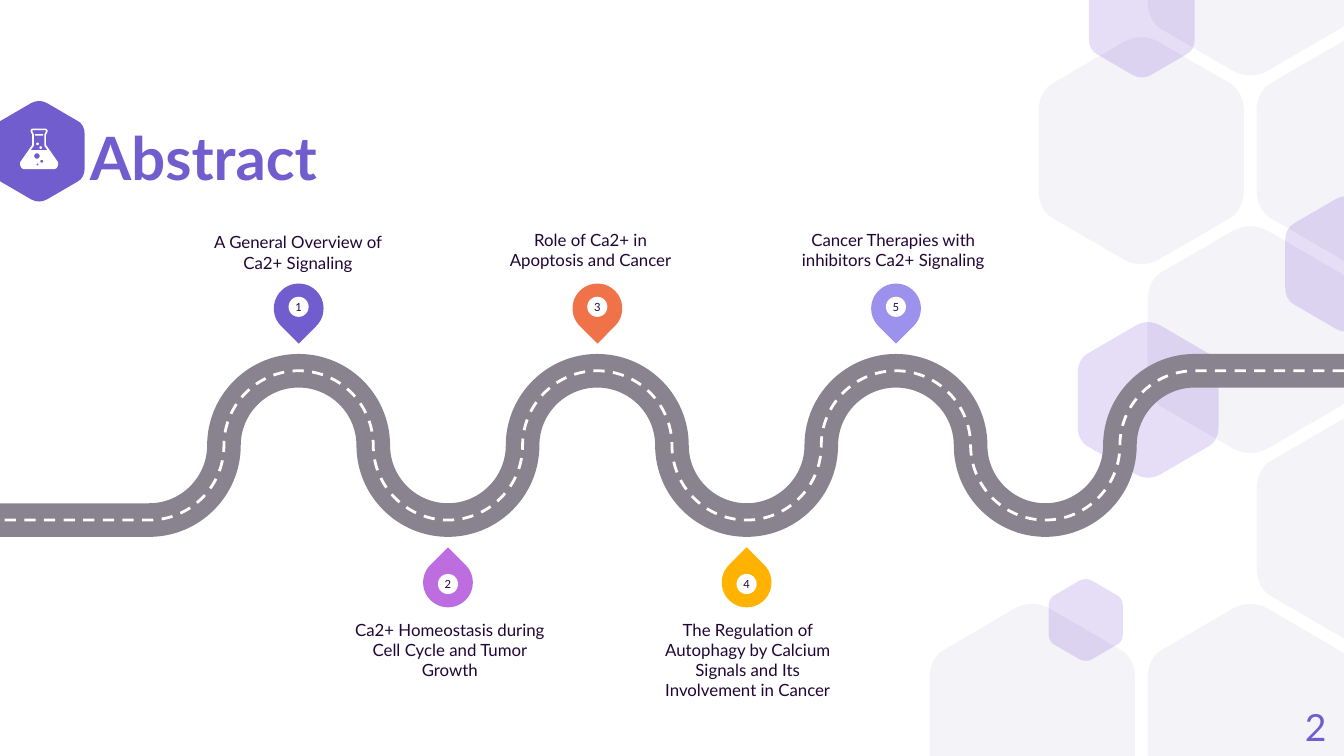
from math import cos, pi, sin

from pptx import Presentation
from pptx.dml.color import RGBColor
from pptx.enum.dml import MSO_LINE
from pptx.enum.shapes import MSO_SHAPE
from pptx.enum.text import MSO_ANCHOR, PP_ALIGN
from pptx.oxml.ns import qn
from pptx.util import Cm, Pt

TEAR, OVAL, BAR = MSO_SHAPE.TEAR, MSO_SHAPE.OVAL, MSO_SHAPE.ROUNDED_RECTANGLE
TOP, MID, LOW = MSO_ANCHOR.TOP, MSO_ANCHOR.MIDDLE, MSO_ANCHOR.BOTTOM
LEFT, MIDST, RIGHT = PP_ALIGN.LEFT, PP_ALIGN.CENTER, PP_ALIGN.RIGHT
DASH = MSO_LINE.DASH
INK = {
    "main": "725DCF", "pale": "F4F3F8", "glass": "5322C9", "road": "89828F",
    "white": "FFFFFF", "dark": "210635", "coral": "F07249", "lilac": "9D91EE",
    "gold": "FFB200", "pink": "BD6DE0",
}
WIDE, HIGH = 25.4, 14.29
STEP = WIDE / 9
BEND = STEP / 2
AXIS = 8.42
PULL = 0.55
SIDE = [(1, 0.385), (1, 0.5), (0.95, 0.62), (0.84, 0.67)]
TIP = [(0.17, 1.06), (0.06, 1.12), (-0.06, 1.12), (-0.17, 1.06)]
HALF = SIDE + TIP + [(-x, y) for x, y in reversed(SIDE)]
COMB = HALF + [(-x, -y) for x, y in HALF]


def put(shape, words, size=9, ink="dark", bold=False, align=MIDST, anchor=MID, space=None):
    frame = shape.text_frame
    frame.word_wrap = True
    frame.vertical_anchor = anchor
    frame.margin_left = frame.margin_right = frame.margin_top = frame.margin_bottom = 0
    line = frame.paragraphs[0]
    line.alignment = align
    line.line_spacing = space
    run = line.add_run()
    run.text = words
    run.font.name = "Lato"
    run.font.size = Pt(size)
    run.font.bold = bold
    run.font.color.rgb = RGBColor.from_string(INK[ink])


def ring(x, y, radius):
    return [(x + radius * cos(i * pi / 4), y + radius * sin(i * pi / 4)) for i in range(8)]


def mirror(axis, half):
    return [(axis + x, y) for x, y in half] + [(axis - x, y) for x, y in reversed(half)]


def route():
    path = [(0, AXIS + BEND), (STEP, AXIS + BEND)]
    for i in range(1, 15):
        x, y = path[-1]
        right, level = x + BEND, AXIS + BEND * cos(i * pi / 2)
        if i % 2:
            path += [(x + PULL * BEND, y), (right, level + PULL * (y - level))]
        else:
            path += [(x, y + PULL * (level - y)), (right - PULL * BEND, level)]
        path.append((right, level))
    return [(WIDE, AXIS - BEND)] + path[::-1]


def bow(shape, kinds):
    legs = iter(list(shape._element.iter(qn("a:lnTo"))))
    for kind in kinds:
        leg = next(legs)
        if kind == "C":
            arc = leg.makeelement(qn("a:cubicBezTo"), {})
            leg.addprevious(arc)
            for part in (leg, next(legs), next(legs)):
                arc.append(part[0])
                part.getparent().remove(part)


class Pen:
    def __init__(self, slide):
        self.slide = slide
        self.shapes = slide.shapes

    def paint(self, shape, ink, clear=None):
        shape.shadow.inherit = False
        shape.line.fill.background()
        shape.fill.solid()
        shape.fill.fore_color.rgb = RGBColor.from_string(INK[ink])
        if clear:
            tone = shape._element.spPr.find(".//" + qn("a:srgbClr"))
            tone.append(tone.makeelement(qn("a:alpha"), {"val": str(clear * 1000)}))
        return shape

    def trace(self, paths, kinds="", close=True):
        paths = [[(Cm(x), Cm(y)) for x, y in path] for path in paths]
        form = self.shapes.build_freeform(*paths[0][0])
        for i, path in enumerate(paths):
            if i:
                form.move_to(*path[0])
            form.add_line_segments(path[1:], close=close)
        shape = form.convert_to_shape()
        bow(shape, kinds)
        return shape

    def cell(self, x, y, half, ink, clear=None):
        path = [(x + half * a, min(max(y + half * b, 0), HIGH)) for a, b in COMB]
        self.paint(self.trace([path], "C" + "LC" * 5), ink, clear)

    def road(self, ink, width, dash=None):
        shape = self.trace([route()], "L" + "C" * 14 + "L", close=False)
        shape.shadow.inherit = False
        shape.fill.background()
        shape.line.color.rgb = RGBColor.from_string(INK[ink])
        shape.line.width = Pt(width)
        shape.line.dash_style = dash

    def solid(self, kind, x, y, wide, high, ink):
        shape = self.shapes.add_shape(kind, Cm(x - wide / 2), Cm(y - high / 2), Cm(wide), Cm(high))
        return self.paint(shape, ink)

    def text(self, x, y, wide, high, words, **style):
        put(self.shapes.add_textbox(Cm(x), Cm(y), Cm(wide), Cm(high)), words, **style)

    def pin(self, x, y, shift, turn, ink, mark):
        self.solid(TEAR, x, y, 0.94, 0.94, ink).rotation = turn
        put(self.solid(OVAL, x, y + shift, 0.38, 0.38, "white"), mark, size=6)

    def flask(self, x):
        outer = [(0.13, 2.43), (0.16, 2.46), (0.16, 2.49), (0.13, 2.55), (0.13, 2.74),
                 (0.36, 3.07), (0.36, 3.12), (0.33, 3.18), (0.29, 3.2)]
        inner = [(0.12, 2.46), (0.13, 2.48), (0.1, 2.54), (0.1, 2.76), (0.16, 2.84)]
        holes = [(-0.04, 2.95, 0.055), (0.05, 3.05, 0.03), (-0.03, 3.11, 0.02)]
        paths = [mirror(x, outer), mirror(x, inner)]
        paths += [ring(x + dx, y, radius) for dx, y, radius in holes]
        self.paint(self.trace(paths), "white")
        self.solid(BAR, x, 2.55, 0.15, 0.03, "white")
        for dx, y in [(0.03, 2.79), (-0.03, 2.72)]:
            self.solid(OVAL, x + dx, y, 0.05, 0.05, "white")


def main():
    deck = Presentation()
    deck.slide_width, deck.slide_height = Cm(WIDE), Cm(HIGH)
    pen = Pen(deck.slides.add_slide(deck.slide_layouts[6]))

    pen.cell(0.74, 2.86, 0.86, "main")
    for col, row in [(0, 4), (2, 4), (3, 1), (2, 0), (2, 2), (1, 1), (3, 3)]:
        pen.cell(19.51 + 2.06 * col, -0.72 + 3.57 * row, 1.94, "pale")
    for x, y, half in [(25.45, 4.99, 1.16), (20.52, 11.72, 0.7), (21.58, 0.36, 1), (21.7, 7.56, 1.33)]:
        pen.cell(x, y, half, "glass", 15)

    pen.text(1.7, 2.51, 16.69, 1.09, "Abstract", size=32, ink="main", bold=True, align=LEFT, space=0.9)
    pen.text(23.55, 13.18, 1.52, 1.09, "2", size=20, ink="main", align=RIGHT)
    pen.road("road", 18)
    pen.road("white", 1.5, DASH)

    stops = [
        ("main", 3.84, 3.68, "A General Overview of Ca2+ Signaling"),
        ("pink", 6.71, 11.71, "Ca2+ Homeostasis during Cell Cycle and Tumor Growth"),
        ("coral", 9.37, 3.63, "Role of Ca2+ in Apoptosis and Cancer"),
        ("gold", 12.34, 11.71,
         "The Regulation of Autophagy by Calcium Signals and Its Involvement in Cancer"),
        ("lilac", 15.09, 3.63, "Cancer Therapies with inhibitors Ca2+ Signaling"),
    ]
    for i, (ink, x, y, words) in enumerate(stops, 1):
        over = i % 2
        spot = (5.83, -0.03, 135) if over else (11.01, 0.03, 315)
        pen.pin((i + 1) * STEP, *spot, ink, str(i))
        pen.text(x, y, 3.58, 1.47, words, anchor=LOW if over else TOP)
    pen.flask(0.74)
    deck.save("out.pptx")


if __name__ == "__main__":
    main()
